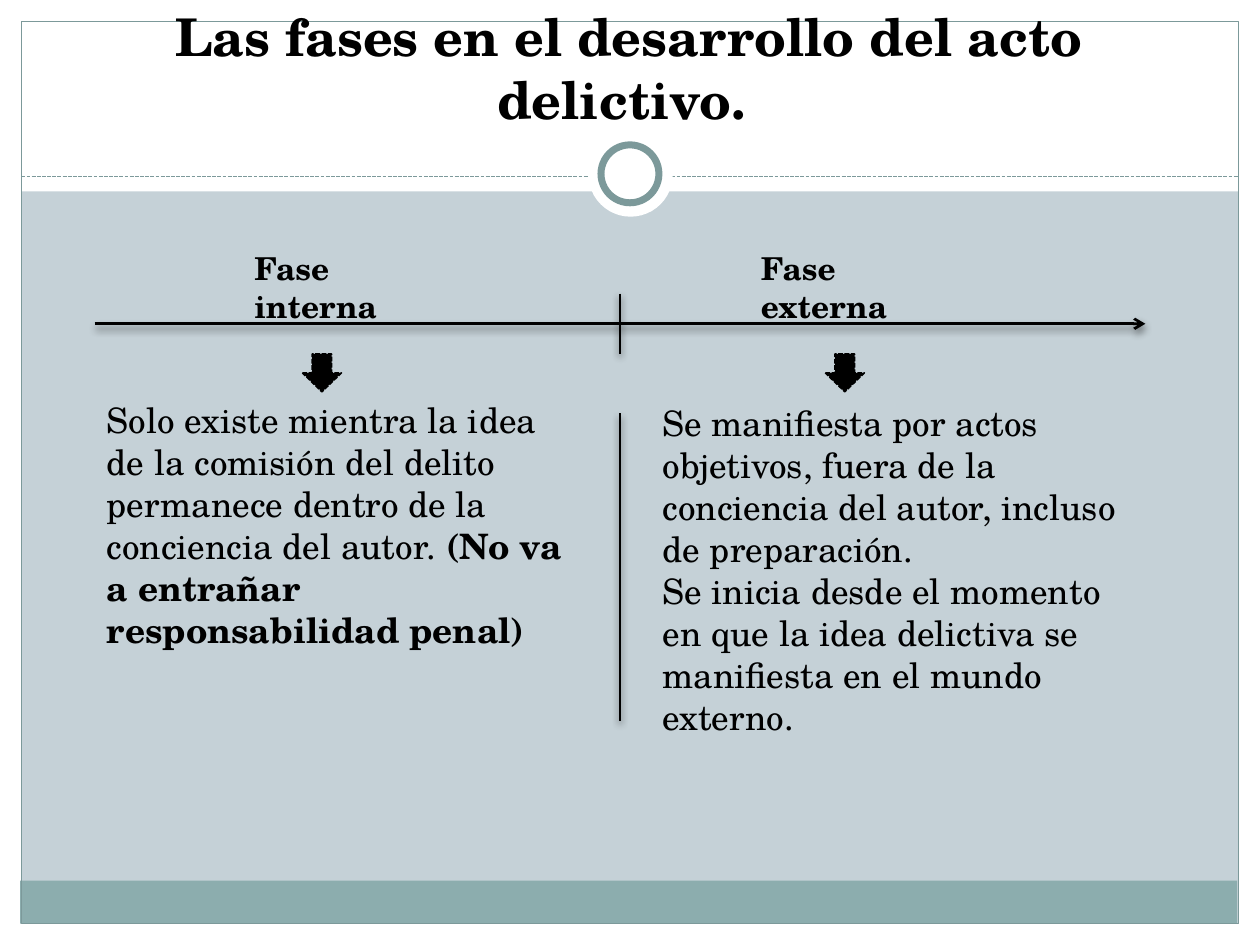
from pptx import Presentation
from pptx.dml.color import RGBColor as Rgb
from pptx.enum.dml import MSO_LINE as Dash
from pptx.enum.shapes import MSO_CONNECTOR as Conn, MSO_SHAPE as Geo
from pptx.enum.text import MSO_ANCHOR as Anchor, PP_ALIGN as Align
from pptx.oxml import parse_xml
from pptx.oxml.ns import nsdecls
from pptx.util import Inches, Pt

FONT = "TeX Gyre Schola"
COLORS = {"back": "C5D1D7", "white": "FFFFFF", "band": "8CADAE",
          "frame": "7C999A", "ink": "000000"}
SHADE = ('<a:outerShdw blurRad="50800" dist="25400" dir="5400000" rotWithShape="0">'
         '<a:srgbClr val="000000"><a:alpha val="45000"/></a:srgbClr></a:outerShdw>')


def color(name):
    return Rgb.from_string(COLORS[name])


def set_line(line, name, width, dash=None):
    line.color.rgb = color(name)
    line.width = Pt(width)
    if dash:
        line.dash_style = dash


def add_box(slide, geo, box, fill=None, line=None, width=0.75, dash=None):
    shape = slide.shapes.add_shape(geo, *map(Inches, box))
    shape.shadow.inherit = False
    if fill:
        shape.fill.solid()
        shape.fill.fore_color.rgb = color(fill)
    else:
        shape.fill.background()
    if line:
        set_line(shape.line, line, width, dash)
    else:
        shape.line.fill.background()


def add_line(slide, ends, name="ink", width=1.57, dash=None, head=False, shade=True):
    line = slide.shapes.add_connector(Conn.STRAIGHT, *map(Inches, ends))
    set_line(line.line, name, width, dash)
    props = line._element.spPr
    if head:
        tail = parse_xml(f'<a:tailEnd {nsdecls("a")} type="arrow"/>')
        line.line._get_or_add_ln().append(tail)
    effect = SHADE if shade else ""
    props.append(parse_xml(f'<a:effectLst {nsdecls("a")}>{effect}</a:effectLst>'))


def add_text(slide, box, paras, size, align=Align.LEFT, anchor=Anchor.TOP, right=0.1):
    """Each paragraph is a list of (text, bold) runs."""
    frame = slide.shapes.add_textbox(*map(Inches, box)).text_frame
    frame.word_wrap = True
    frame.vertical_anchor = anchor
    frame.margin_right = Inches(right)
    for i, runs in enumerate(paras):
        para = frame.paragraphs[0] if i == 0 else frame.add_paragraph()
        para.alignment = align
        for text, bold in runs:
            run = para.add_run()
            run.text = text
            run.font.name = FONT
            run.font.size = Pt(size)
            run.font.bold = bold
            run.font.color.rgb = color("ink")


def add_frame(slide):
    # White margins, then the foot band and the outline
    for box in ((0, 7.33, 10, 0.17), (0, 0, 10, 1.52),
                (0, 0, 0.17, 7.5), (9.83, 0, 0.17, 7.5)):
        add_box(slide, Geo.RECTANGLE, box, "white")
    add_box(slide, Geo.RECTANGLE, (0.16, 6.99, 9.66, 0.34), "band")
    add_box(slide, Geo.RECTANGLE, (0.17, 0.17, 9.66, 7.16), line="frame")
    # Dashed rule with the ring on it
    add_line(slide, (0.17, 1.4, 9.83, 1.4), "frame", 0.75, Dash.SQUARE_DOT, shade=False)
    add_box(slide, Geo.OVAL, (4.67, 1.05, 0.67, 0.67), "white")
    add_box(slide, Geo.OVAL, (4.77, 1.15, 0.46, 0.46), "white", "frame", 4)


def main():
    deck = Presentation()
    deck.slide_width, deck.slide_height = Inches(10), Inches(7.5)
    slide = deck.slides.add_slide(deck.slide_layouts[6])
    slide.background.fill.solid()
    slide.background.fill.fore_color.rgb = color("back")
    add_frame(slide)

    # Title
    add_text(slide, (0.33, 0.25, 9.33, 0.83),
             [[("Las fases en el desarrollo del acto delictivo. ", True)]],
             29.7, Align.CENTER, Anchor.BOTTOM)

    # Time axis and its tick
    add_line(slide, (0.75, 2.57, 9.09, 2.57), head=True)
    add_line(slide, (4.92, 2.33, 4.92, 2.81))

    # Phase names, broken over two lines
    add_text(slide, (1.92, 1.93, 1.82, 0.4), [[("Fase interna", True)]], 18, right=0.2)
    add_text(slide, (5.94, 1.93, 1.85, 0.4), [[("Fase externa", True)]], 18, right=0.2)

    # Phase descriptions
    add_text(slide, (0.75, 3.11, 3.94, 2.12), [[
        ("Solo existe mientra la idea de la comisión del delito permanece "
         "dentro de la conciencia del autor. ", False),
        ("(No va a entrañar responsabilidad penal)", True)]], 20)
    add_text(slide, (5.16, 3.14, 3.91, 2.79), [
        [("Se manifiesta por actos objetivos, fuera de la conciencia del autor, "
          "incluso de preparación.", False)],
        [("Se inicia desde el momento en que la idea delictiva se manifiesta "
          "en el mundo externo.", False)]], 20)

    # Divider and down arrows
    add_line(slide, (4.92, 3.28, 4.92, 5.72))
    for left in (2.4, 6.55):
        add_box(slide, Geo.DOWN_ARROW, (left, 2.81, 0.31, 0.3),
                "ink", "ink", 0.9, Dash.SQUARE_DOT)

    deck.save("out.pptx")


if __name__ == "__main__":
    main()
